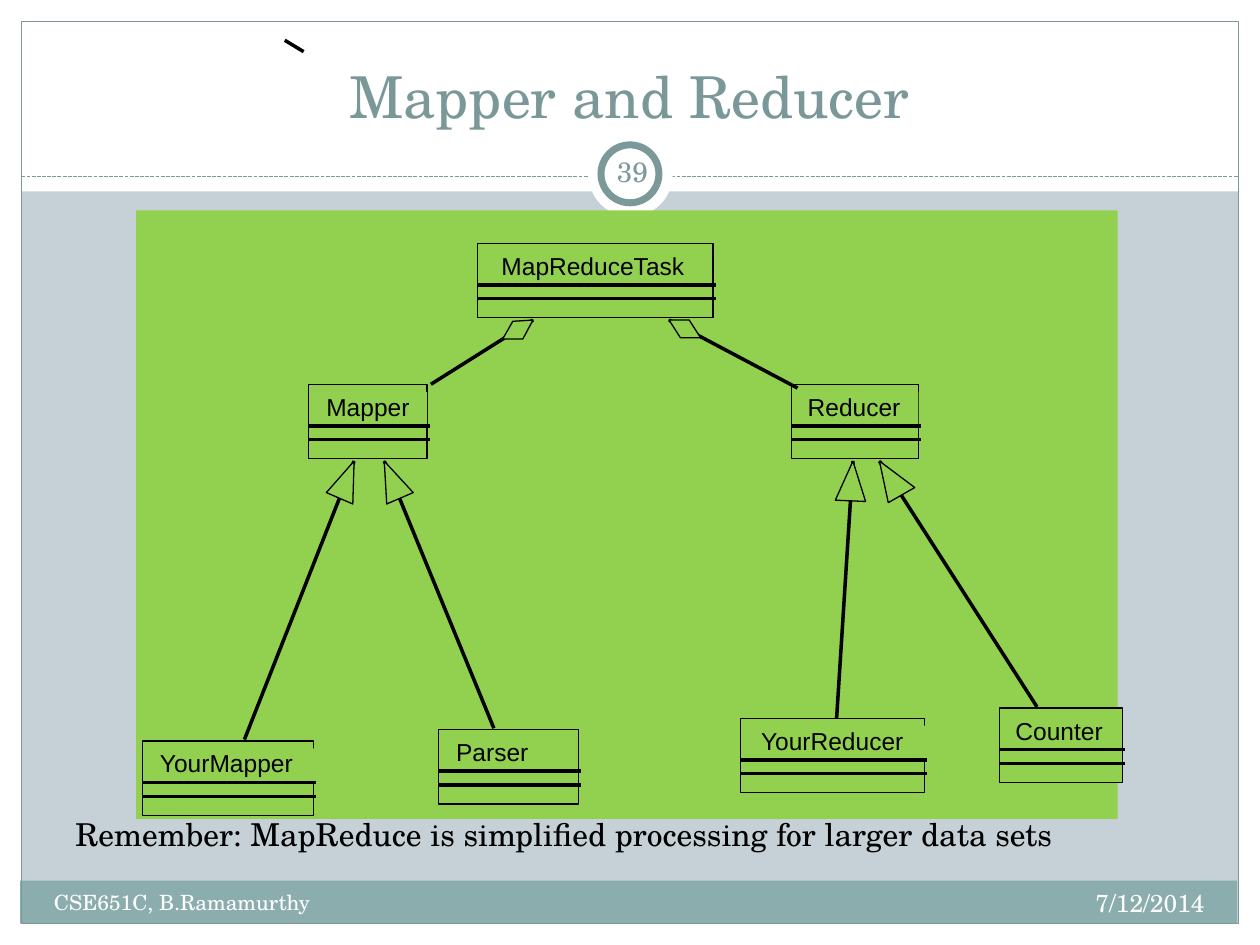
from pptx import Presentation
from pptx.dml.color import RGBColor
from pptx.enum.dml import MSO_LINE
from pptx.enum.shapes import MSO_CONNECTOR, MSO_SHAPE
from pptx.enum.text import MSO_ANCHOR, MSO_AUTO_SIZE, PP_ALIGN
from pptx.oxml.ns import qn
from pptx.util import Inches, Pt
from lxml import etree

RECT, OVAL = MSO_SHAPE.RECTANGLE, MSO_SHAPE.OVAL
STRAIGHT = MSO_CONNECTOR.STRAIGHT
LEFT, CENTER, RIGHT = PP_ALIGN.LEFT, PP_ALIGN.CENTER, PP_ALIGN.RIGHT
TOP, MIDDLE, BOTTOM = MSO_ANCHOR.TOP, MSO_ANCHOR.MIDDLE, MSO_ANCHOR.BOTTOM
SERIF, SANS = "TeX Gyre Schola", "Arial"
WHITE, BLACK, GREEN, TEAL = "FFFFFF", "000000", "92D050", "7C999A"
MARGINS = ("margin_left", "margin_top", "margin_right", "margin_bottom")


def color(hex_text):
    return RGBColor.from_string(hex_text)


def style(item, fill=None, line=None, width=0):
    """Set fill and outline of a shape, or the line of a connector, without shadow."""
    if hasattr(item, "fill"):
        item.shadow.inherit = False
        if fill:
            item.fill.solid()
            item.fill.fore_color.rgb = color(fill)
        else:
            item.fill.background()
    else:
        etree.SubElement(item._element.spPr, qn("a:effectLst"))
    if line:
        item.line.color.rgb = color(line)
        item.line.width = Pt(width)
    else:
        item.line.fill.background()


deck = Presentation()
deck.slide_width, deck.slide_height = Inches(10), Inches(7.5)
page = deck.slides.add_slide(deck.slide_layouts[6])
page.background.fill.solid()
page.background.fill.fore_color.rgb = color("C5D1D7")
shapes = page.shapes

# Frame: white margins, footer band and outline
for bounds, look in [
    ((0, 7.33, 10, 0.17), {"fill": WHITE}),
    ((0, 0, 10, 1.52), {"fill": WHITE}),
    ((0, 0, 0.17, 7.5), {"fill": WHITE}),
    ((9.83, 0, 0.17, 7.5), {"fill": WHITE}),
    ((0.16, 6.99, 9.66, 0.34), {"fill": "8CADAE"}),
    ((0.17, 0.17, 9.66, 7.16), {"line": TEAL, "width": 0.75}),
]:
    style(shapes.add_shape(RECT, *map(Inches, bounds)), **look)

divider = shapes.add_connector(STRAIGHT, *map(Inches, (0.17, 1.4, 9.83, 1.4)))
style(divider, line=TEAL, width=0.75)
divider.line.dash_style = MSO_LINE.SQUARE_DOT

# Page number badge, then the diagram's panel
for kind, bounds, look in [
    (OVAL, (4.67, 1.05, 0.67, 0.67), {"fill": WHITE}),
    (OVAL, (4.77, 1.15, 0.46, 0.46), {"fill": WHITE, "line": TEAL, "width": 4}),
    (RECT, (1.08, 1.67, 7.79, 4.83), {"fill": GREEN}),
]:
    style(shapes.add_shape(kind, *map(Inches, bounds)), **look)

# Class boxes: name, left, top, width, label left, label width
for name, left, top, width, label_left, label_width in [
    ("MapReduceTask", 3.79, 1.93, 1.87, 3.98, 1.46),
    ("YourMapper", 1.13, 5.88, 1.36, 1.27, 1.23),
    ("YourReducer", 5.88, 5.7, 1.46, 6.04, 1.32),
    ("Parser", 3.48, 5.79, 1.11, 3.62, 0.58),
    ("Counter", 7.93, 5.62, 0.98, 8.06, 0.84),
    ("Mapper", 2.45, 3.05, 0.94, 2.59, 0.8),
    ("Reducer", 6.28, 3.05, 1.01, 6.41, 0.88),
]:
    box = shapes.add_shape(RECT, *map(Inches, (left, top, width, 0.59)))
    style(box, GREEN, BLACK)
    label = shapes.add_shape(RECT, *map(Inches, (label_left, top + 0.06, label_width, 0.27)))
    style(label, GREEN)
    frame = label.text_frame
    for margin in MARGINS:
        setattr(frame, margin, 0)
    frame.word_wrap = False
    frame.auto_size = MSO_AUTO_SIZE.SHAPE_TO_FIT_TEXT
    frame.vertical_anchor = TOP
    para = frame.paragraphs[0]
    para.alignment = LEFT
    span = para.add_run()
    span.text = name
    span.font.name, span.font.size = SANS, Pt(14)
    span.font.color.rgb = color(BLACK)
    for drop in (0.33, 0.44):
        ends = (left, top + drop, left + width + 0.02, top + drop)
        style(shapes.add_connector(STRAIGHT, *map(Inches, ends)), line=BLACK)

# Relations: line ends, then the outline of the arrowhead or diamond
for ends, outline in [
    ((1.94, 5.87, 2.81, 3.66), [(2.81, 3.66), (2.8, 4), (2.59, 3.91)]),
    ((3.92, 5.78, 3.05, 3.66), [(3.05, 3.66), (3.28, 3.91), (3.07, 4)]),
    ((6.64, 5.7, 6.77, 3.66), [(6.77, 3.66), (6.87, 3.98), (6.63, 3.97)]),
    ((8.23, 5.61, 6.98, 3.66), [(6.98, 3.66), (7.26, 3.87), (7.05, 3.99)]),
    ((3.42, 3.05, 4.23, 2.54), [(4.23, 2.54), (4.15, 2.69), (3.99, 2.69), (4.07, 2.55)]),
    ((6.33, 3.08, 5.31, 2.54), [(5.31, 2.54), (5.47, 2.54), (5.56, 2.68), (5.4, 2.68)]),
    ((2.26, 0.32, 2.41, 0.41), []),
]:
    style(shapes.add_connector(STRAIGHT, *map(Inches, ends)), line=BLACK)
    if outline:
        start, *others = [(Inches(x), Inches(y)) for x, y in outline]
        builder = shapes.build_freeform(*start)
        builder.add_line_segments(others, close=True)
        style(builder.convert_to_shape(), GREEN, BLACK)

# Texts: wording, bounds, size, colour, alignment, anchor, side margin
for text, bounds, size, ink, alignment, anchor, side in [
    ("Mapper and Reducer", (0.33, 0.25, 9.33, 0.83), 33, "7B9899", CENTER, BOTTOM, 0.1),
    ("7/12/2014", (6.33, 7, 3.33, 0.4), 14, WHITE, RIGHT, TOP, 0.1),
    ("CSE651C, B.Ramamurthy", (0.33, 7.01, 3.92, 0.4), 12, WHITE, LEFT, TOP, 0.1),
    ("39", (4.77, 1.12, 0.5, 0.48), 16, TEAL, CENTER, MIDDLE, 0.05),
    ("Remember: MapReduce is simplified processing for larger data sets",
     (0.5, 6.42, 8.17, 0.4), 18, BLACK, LEFT, TOP, 0.1),
]:
    frame = shapes.add_textbox(*map(Inches, bounds)).text_frame
    layout = {"word_wrap": True, "vertical_anchor": anchor,
              "margin_left": Inches(side), "margin_right": Inches(side)}
    for key, value in layout.items():
        setattr(frame, key, value)
    para = frame.paragraphs[0]
    para.alignment = alignment
    span = para.add_run()
    span.text = text
    span.font.name, span.font.size = SERIF, Pt(size)
    span.font.color.rgb = color(ink)

deck.save("out.pptx")
